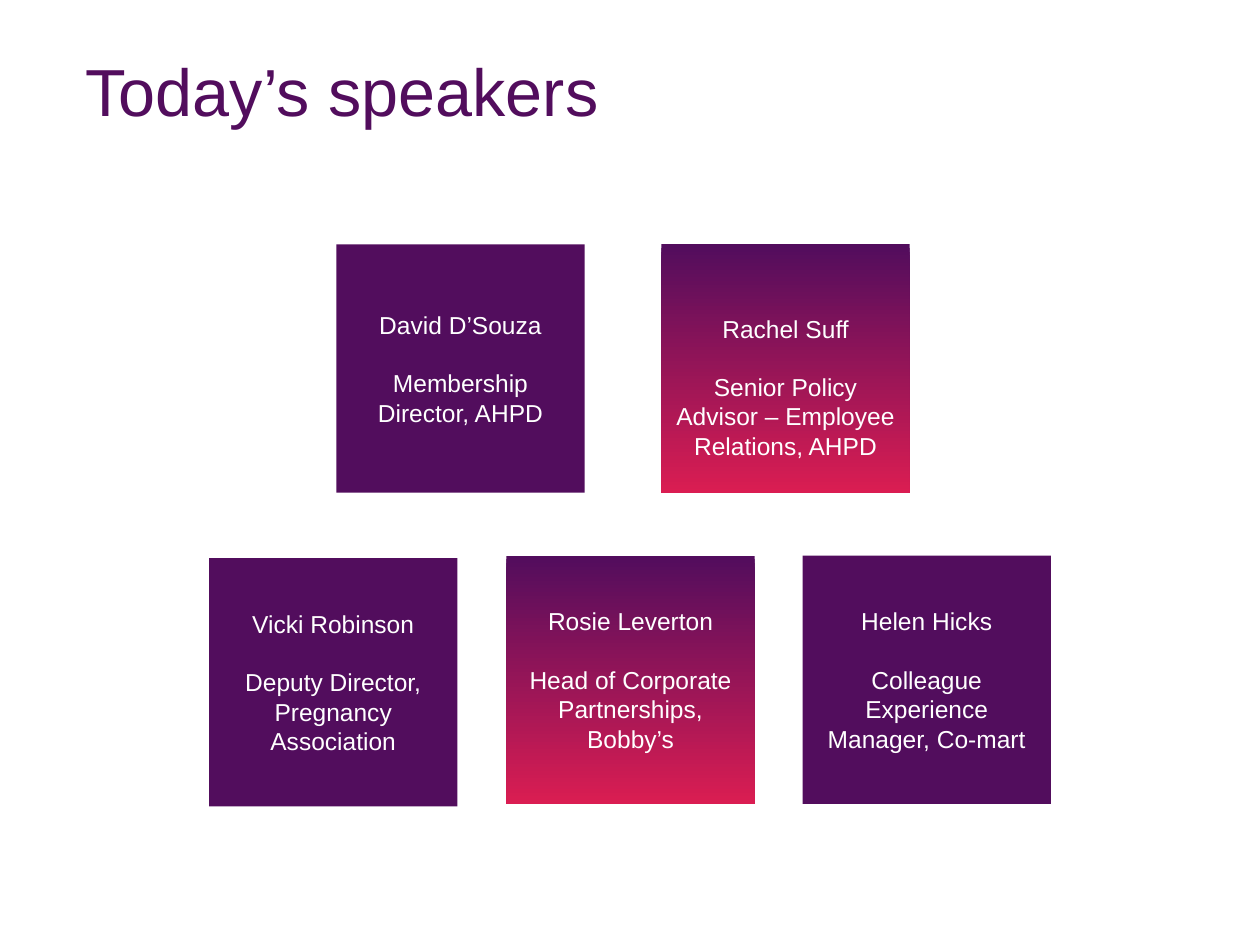
"""Build the slide that introduces today's speakers."""
from pptx import Presentation
from pptx import util as u
from pptx.dml.color import RGBColor
from pptx.enum import shapes, text

HUES = {"plum": "520D5D", "rose": "DA1D52", "white": "FFFFFF"}
SIDE = 1.97
CARDS = [
    (5.25, 1.94, True, "Rachel Suff", "Senior Policy Advisor – Employee Relations, AHPD"),
    (6.37, 4.41, False, "Helen Hicks", "Colleague Experience Manager, Co-mart"),
    (4.02, 4.41, True, "Rosie Leverton", "Head of Corporate Partnerships, Bobby’s"),
    (1.66, 4.43, False, "Vicki Robinson", "Deputy Director, Pregnancy Association"),
    (2.67, 1.94, False, "David D’Souza", "Membership Director, AHPD"),
]


def hue(name):
    """Return the named colour."""
    return RGBColor.from_string(HUES[name])


def write(para, words, size=14, tint="white", align=text.PP_ALIGN.CENTER, gap=0, line=None):
    """Put formatted words in a paragraph."""
    para.alignment = align
    para.space_before = u.Pt(gap)
    para.line_spacing = line
    run = para.add_run()
    run.text = words
    run.font.name = "Arial"
    run.font.size = u.Pt(size)
    run.font.color.rgb = hue(tint)


def paint(shape, blend):
    """Fill a shape with plum, or blend plum down into rose."""
    if blend:
        shape.fill.gradient()
        shape.fill.gradient_angle = 270
        for stop, name in zip(shape.fill.gradient_stops, ("plum", "rose")):
            stop.color.rgb = hue(name)
    else:
        shape.fill.solid()
        shape.fill.fore_color.rgb = hue("plum")
    shape.line.fill.background()
    shape.shadow.inherit = False


def add_card(slide, left, top, blend, name, role):
    """Add a square with a speaker's name and role."""
    box = [u.Inches(n) for n in (left, top, SIDE, SIDE)]
    card = slide.shapes.add_shape(shapes.MSO_SHAPE.RECTANGLE, *box)
    paint(card, blend)
    frame = card.text_frame
    frame.word_wrap = True
    frame.vertical_anchor = text.MSO_ANCHOR.MIDDLE
    write(frame.paragraphs[0], name)
    write(frame.add_paragraph(), role, gap=16.5)
    return card


def add_title(slide, words):
    """Place and fill the title."""
    title = slide.shapes.title
    title.left, title.top = u.Inches(0.58), u.Inches(0.42)
    title.width, title.height = u.Inches(8.62), u.Inches(1.35)
    frame = title.text_frame
    frame.auto_size = text.MSO_AUTO_SIZE.NONE
    frame.vertical_anchor = text.MSO_ANCHOR.TOP
    write(frame.paragraphs[0], words, size=38, tint="plum", align=text.PP_ALIGN.LEFT, line=0.9)


def main():
    """Build and save the slide."""
    deck = Presentation()
    deck.slide_width, deck.slide_height = u.Inches(10), u.Inches(7.5)
    slide = deck.slides.add_slide(deck.slide_layouts[5])
    add_title(slide, "Today’s speakers")
    cards = [add_card(slide, *card) for card in CARDS]
    cards[0].text_frame.margin_top = u.Inches(0.34)
    deck.save("out.pptx")


if __name__ == "__main__":
    main()
